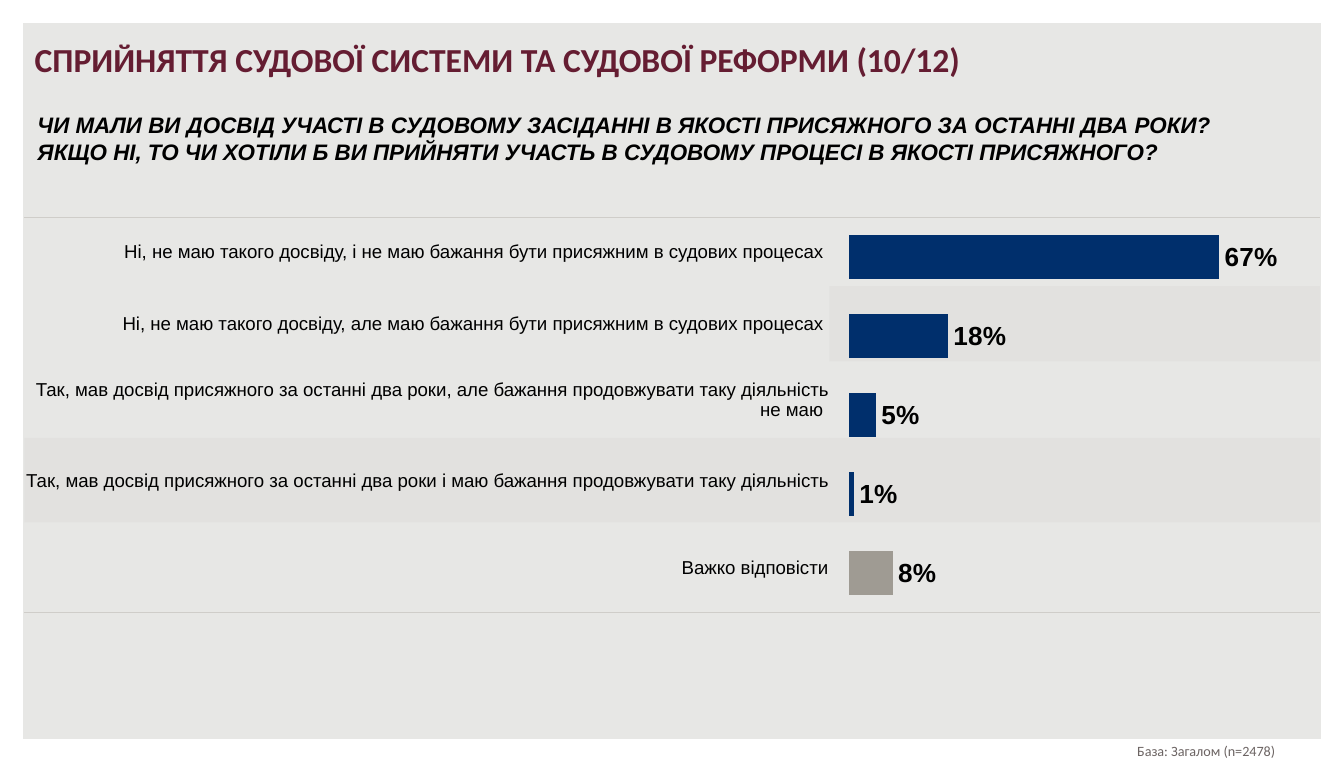
from lxml.etree import SubElement, fromstring
from pptx import Presentation
from pptx.chart.data import CategoryChartData
from pptx.dml.color import RGBColor
from pptx.enum.chart import XL_CHART_TYPE, XL_LABEL_POSITION
from pptx.enum.shapes import MSO_SHAPE
from pptx.enum.text import MSO_ANCHOR, PP_ALIGN
from pptx.oxml.ns import nsdecls, qn
from pptx.util import Pt

COLORS = {
    "background": "E7E7E5",
    "frame": "FFFFFF",
    "title": "651D32",
    "text": "000000",
    "note": "6C6463",
    "rule": "CFCDC9",
    "bar": "002F6C",
    "unsure": "9F9B93",
}
NO_TABLE_STYLE = "{2D5ABB26-0587-4C30-8999-92F81FD0307C}"
ANSWERS = [
    ("Ні, не маю такого досвіду, і не маю бажання бути присяжним в судових процесах ", 0.67),
    ("Ні, не маю такого досвіду, але маю бажання бути присяжним в судових процесах ", 0.18),
    ("Так, мав досвід присяжного за останні два роки, але бажання продовжувати "
     "таку діяльність не маю ", 0.05),
    ("Так, мав досвід присяжного за останні два роки і маю бажання продовжувати "
     "таку діяльність", 0.01),
    ("Важко відповісти", 0.08),
]
ROW_HEIGHTS = [36.7, 40.3, 41, 45.4, 48.2]
COLUMN_WIDTHS = [431.3, 262.8]
SHADED_CELLS = {(1, 1), (3, 0), (3, 1)}
TABLE_TOP, TABLE_HEIGHT = 116.6, 211.7


def rgb(name):
    return RGBColor.from_string(COLORS[name])


def set_font(font, size, name="Arial", color="text", bold=False, italic=False):
    font.size, font.name = Pt(size), name
    font.bold, font.italic = bold, italic
    font.color.rgb = rgb(color)


def write_text(tf, text, align=PP_ALIGN.LEFT, anchor=MSO_ANCHOR.TOP, **font):
    tf.word_wrap = True
    tf.vertical_anchor = anchor
    p = tf.paragraphs[0]
    p.alignment = align
    r = p.add_run()
    r.text = text
    set_font(r.font, **font)


def add_text(slide, box, text, **style):
    sp = slide.shapes.add_textbox(*map(Pt, box))
    write_text(sp.text_frame, text, **style)


def add_frame(slide, width, height):
    sp = slide.shapes.add_shape(MSO_SHAPE.FRAME, 0, 0, width, height)
    sp.adjustments[0] = 0.03
    sp.shadow.inherit = False
    sp.fill.solid()
    sp.fill.fore_color.rgb = rgb("frame")
    sp.line.fill.background()


def shade_cell(cell):
    """Fill the cell with the rule colour at 20% opacity."""
    cell.fill.solid()
    cell.fill.fore_color.rgb = rgb("rule")
    color = cell.fill._xPr.find(qn("a:solidFill"))[0]
    SubElement(color, qn("a:alpha"), val="20000")


def add_border(cell, side):
    line = fromstring(
        f'<a:{side} {nsdecls("a")} w="12700"><a:solidFill>'
        f'<a:srgbClr val="{COLORS["rule"]}"/></a:solidFill></a:{side}>')
    cell._tc.get_or_add_tcPr().insert(0, line)


def add_answer_table(slide):
    table = slide.shapes.add_table(
        len(ANSWERS), 2, Pt(13), Pt(TABLE_TOP),
        Pt(sum(COLUMN_WIDTHS)), Pt(TABLE_HEIGHT)).table
    table.first_row = table.horz_banding = False
    table._tbl.tblPr.find(qn("a:tableStyleId")).text = NO_TABLE_STYLE
    for column, width in zip(table.columns, COLUMN_WIDTHS):
        column.width = Pt(width)
    last = len(ANSWERS) - 1
    for i, (answer, _) in enumerate(ANSWERS):
        table.rows[i].height = Pt(ROW_HEIGHTS[i])
        for j in range(2):
            cell = table.cell(i, j)
            if (i, j) in SHADED_CELLS:
                shade_cell(cell)
            else:
                cell.fill.background()
            if i == 0:
                add_border(cell, "lnT")
            if i == last:
                add_border(cell, "lnB")
        label = table.cell(i, 0)
        label.margin_left = label.margin_right = label.margin_top = Pt(0.7)
        label.margin_bottom = 0
        label.vertical_anchor = MSO_ANCHOR.MIDDLE
        write_text(label.text_frame, answer, align=PP_ALIGN.RIGHT,
                   anchor=None, size=10)


def set_plot_area(chart, x, y, w, h):
    """Place the inner plot area, in fractions of the chart."""
    area = chart._chartSpace.chart.plotArea
    for old in area.findall(qn("c:layout")):
        area.remove(old)
    layout = fromstring(f'<c:layout {nsdecls("c")}><c:manualLayout/></c:layout>')
    settings = [("layoutTarget", "inner"), ("xMode", "edge"), ("yMode", "edge"),
                ("x", x), ("y", y), ("w", w), ("h", h)]
    for tag, value in settings:
        SubElement(layout[0], qn(f"c:{tag}"), val=str(value))
    area.insert(0, layout)


def add_answer_chart(slide):
    data = CategoryChartData(number_format="0%")
    data.categories = [str(i + 1) for i in range(len(ANSWERS))]
    data.add_series("Series 1", [share for _, share in ANSWERS])
    chart = slide.shapes.add_chart(
        XL_CHART_TYPE.BAR_CLUSTERED, Pt(398.9), Pt(TABLE_TOP),
        Pt(293), Pt(TABLE_HEIGHT), data).chart
    chart.has_legend = chart.has_title = False
    set_font(chart.font, 18, "Calibri")
    set_plot_area(chart, 0.19, 0, 0.81, 1)

    chart.category_axis.reverse_order = True
    chart.category_axis.visible = False
    axis = chart.value_axis
    axis.visible = axis.has_major_gridlines = False
    axis.minimum_scale, axis.maximum_scale = 0, 0.8
    axis.tick_labels.number_format = "0%"
    axis.tick_labels.number_format_is_linked = False

    plot = chart.plots[0]
    plot.gap_width = 78
    plot.vary_by_categories = False
    series = plot.series[0]
    unsure = series.points[len(ANSWERS) - 1]
    for item, color in ((series, "bar"), (unsure, "unsure")):
        item.format.fill.solid()
        item.format.fill.fore_color.rgb = rgb(color)
    labels = series.data_labels
    labels.show_value = True
    labels.position = XL_LABEL_POSITION.OUTSIDE_END
    labels.number_format = "0%"
    labels.number_format_is_linked = False
    set_font(labels.font, 14, bold=True)


def main():
    prs = Presentation()
    prs.slide_width, prs.slide_height = Pt(720), Pt(408.24)
    slide = prs.slides.add_slide(prs.slide_layouts[6])
    slide.background.fill.solid()
    slide.background.fill.fore_color.rgb = rgb("background")

    add_frame(slide, prs.slide_width, prs.slide_height)
    add_answer_table(slide)
    add_answer_chart(slide)
    add_text(slide, (13, 56.2, 664.6, 36),
             "ЧИ МАЛИ ВИ ДОСВІД УЧАСТІ В СУДОВОМУ ЗАСІДАННІ В ЯКОСТІ ПРИСЯЖНОГО "
             "ЗА ОСТАННІ ДВА РОКИ? ЯКЩО НІ, ТО ЧИ ХОТІЛИ Б ВИ ПРИЙНЯТИ УЧАСТЬ "
             "В СУДОВОМУ ПРОЦЕСІ В ЯКОСТІ ПРИСЯЖНОГО?",
             size=12, bold=True, italic=True)
    add_text(slide, (11.5, 17.3, 612, 36.7),
             "СПРИЙНЯТТЯ СУДОВОЇ СИСТЕМИ ТА СУДОВОЇ РЕФОРМИ (10/12)",
             size=18, name="Calibri", color="title", bold=True)
    add_text(slide, (583.2, 393.8, 126, 16.6), "База: Загалом (n=2478)",
             align=PP_ALIGN.CENTER, anchor=MSO_ANCHOR.MIDDLE,
             size=7.6, name="Calibri", color="note")
    prs.save("out.pptx")


if __name__ == "__main__":
    main()
